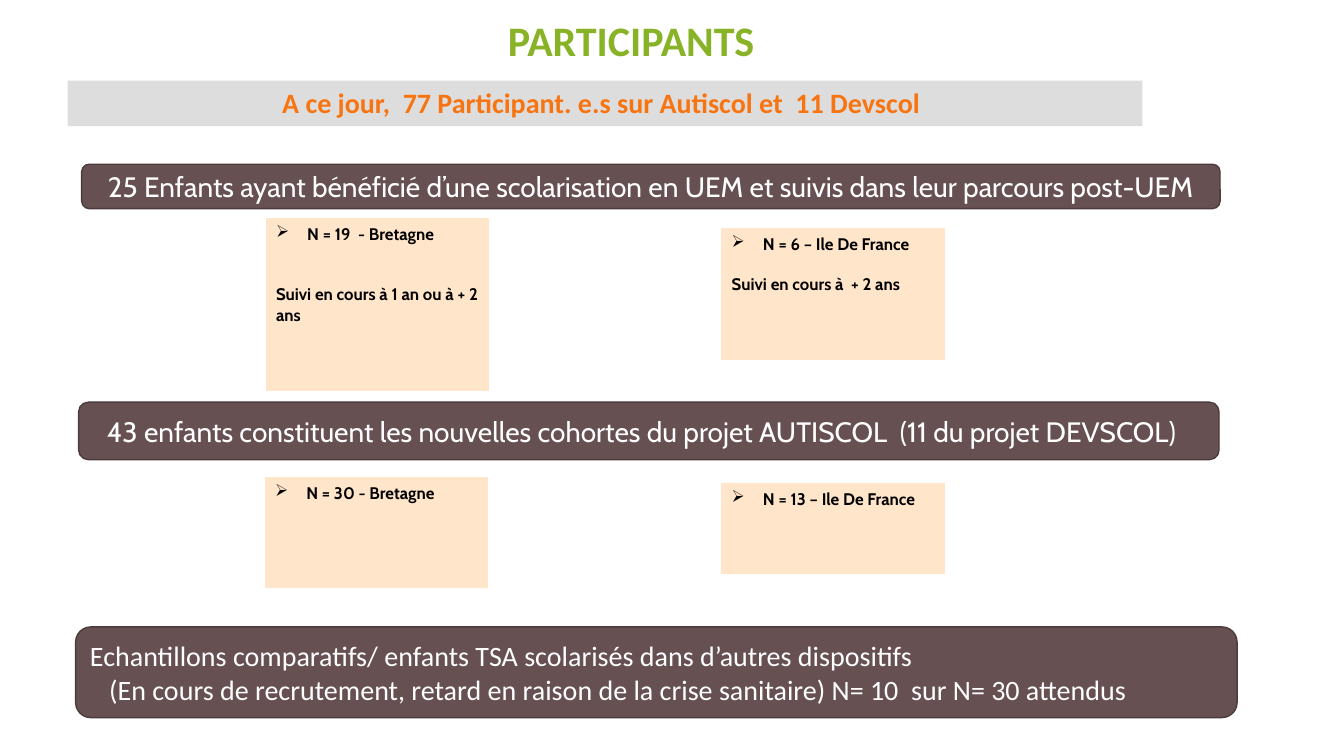
from pptx import Presentation
from pptx import util as u
from pptx.dml.color import RGBColor
from pptx.enum import shapes, text
from pptx.oxml import ns
from lxml import etree

WHITE = RGBColor(0xFF, 0xFF, 0xFF)
BLACK = RGBColor(0x00, 0x00, 0x00)
GREEN = RGBColor(0x88, 0xB3, 0x27)
ORANGE = RGBColor(0xF7, 0x74, 0x11)
GREY = RGBColor(0xDD, 0xDD, 0xDD)
BROWN = RGBColor(0x67, 0x50, 0x52)
DARK_BROWN = RGBColor(0x4C, 0x3B, 0x3D)
PEACH = RGBColor(0xFF, 0xE5, 0xC9)

WIDTH, HEIGHT = u.Inches(13.33), u.Inches(7.5)
CENTER, LEFT = text.PP_ALIGN.CENTER, text.PP_ALIGN.LEFT
TOP, MIDDLE = text.MSO_ANCHOR.TOP, text.MSO_ANCHOR.MIDDLE
RECT = shapes.MSO_SHAPE.RECTANGLE
ROUNDED = shapes.MSO_SHAPE.ROUNDED_RECTANGLE


def place(box):
    left, top, width, height = box
    return [int(share * side / 100) for share, side in
            ((left, WIDTH), (top, HEIGHT), (width, WIDTH), (height, HEIGHT))]


def add_panel(page, box, kind, fill, line=None, line_width=1):
    panel = page.shapes.add_shape(kind, *place(box))
    panel.shadow.inherit = False
    panel.fill.solid()
    panel.fill.fore_color.rgb = fill
    if line is None:
        panel.line.fill.background()
    else:
        panel.line.color.rgb = line
        panel.line.width = u.Pt(line_width)
    return panel


def prepare_frame(shape, anchor, right=0.1):
    frame = shape.text_frame
    frame.word_wrap = True
    frame.vertical_anchor = anchor
    frame.margin_right = u.Inches(right)
    return frame


def write(frame, words, size=20, font="Calibri", color=WHITE, bold=False,
          align=LEFT, before=0, indent=0, bullet=None, spacing=None):
    para = frame.paragraphs[0]
    if para.runs:
        para = frame.add_paragraph()
    para.alignment = align
    if before:
        para.space_before = u.Pt(before)
    if spacing:
        para.line_spacing = spacing
    props = para._p.get_or_add_pPr()
    if indent:
        props.set("marL", str(u.Inches(indent)))
    if bullet:
        props.set("indent", str(-u.Inches(indent)))
        etree.SubElement(props, ns.qn("a:buChar")).set("char", bullet)
    span = para.add_run()
    span.text = words
    span.font.size = u.Pt(size)
    span.font.name = font
    span.font.bold = bold
    span.font.color.rgb = color


def add_title(page, box, words):
    frame = prepare_frame(page.shapes.add_textbox(*place(box)), MIDDLE)
    write(frame, words, size=30, color=GREEN, bold=True, align=CENTER, spacing=0.9)


def add_summary(page, box, words):
    frame = prepare_frame(add_panel(page, box, RECT, GREY), TOP, right=0.17)
    write(frame, words, color=ORANGE, bold=True, align=CENTER)


def add_banner(page, box, lines, right=0.1, **look):
    panel = add_panel(page, box, ROUNDED, BROWN, DARK_BROWN)
    frame = prepare_frame(panel, MIDDLE, right)
    for words, indent in lines:
        write(frame, words, indent=indent, **look)


def add_region_card(page, box, count, note=None, gap=0):
    panel = add_panel(page, box, RECT, PEACH, PEACH, 0.75)
    frame = prepare_frame(panel, TOP)
    look = dict(size=12, font="Cabin", color=BLACK, bold=True)
    write(frame, count, indent=0.31, bullet="➢", **look)
    if note:
        write(frame, note, before=gap, **look)


def build_participants(page):
    heading = dict(font="Cabin", align=CENTER)
    add_title(page, (7.5, -0.27, 78.92, 12), "PARTICIPANTS")
    add_summary(page, (5.03, 10.67, 79.97, 6),
                "A ce jour,  77 Participant. e.s sur Autiscol et  11 Devscol")

    add_banner(page, (6.08, 21.73, 84.7, 5.87),
               [("25 Enfants ayant bénéficié d’une scolarisation en UEM "
                 "et suivis dans leur parcours post-UEM", 0)], **heading)
    add_region_card(page, (19.8, 28.93, 16.58, 22.67), "N = 19  - Bretagne",
                    "Suivi en cours à 1 an ou à + 2 ans", gap=28.8)
    add_region_card(page, (53.71, 30.27, 16.58, 17.33), "N = 6 – Ile De France",
                    "Suivi en cours à  + 2 ans", gap=14.4)

    add_banner(page, (5.85, 53.2, 84.85, 7.6),
               [("43 enfants constituent les nouvelles cohortes du projet "
                 "AUTISCOL  (11 du projet DEVSCOL)", 0)], right=0.24, **heading)
    add_region_card(page, (19.73, 63.2, 16.58, 14.53), "N = 30 - Bretagne")
    add_region_card(page, (53.71, 64, 16.58, 11.87), "N = 13 – Ile De France")

    add_banner(page, (5.63, 82.93, 86.42, 12),
               [("Echantillons comparatifs/ enfants TSA scolarisés "
                 "dans d’autres dispositifs", 0),
                ("(En cours de recrutement, retard en raison de la crise "
                 "sanitaire) N= 10  sur N= 30 attendus", 0.19)])


def main():
    deck = Presentation()
    deck.slide_width, deck.slide_height = WIDTH, HEIGHT
    build_participants(deck.slides.add_slide(deck.slide_layouts[6]))
    deck.save("out.pptx")


if __name__ == "__main__":
    main()
